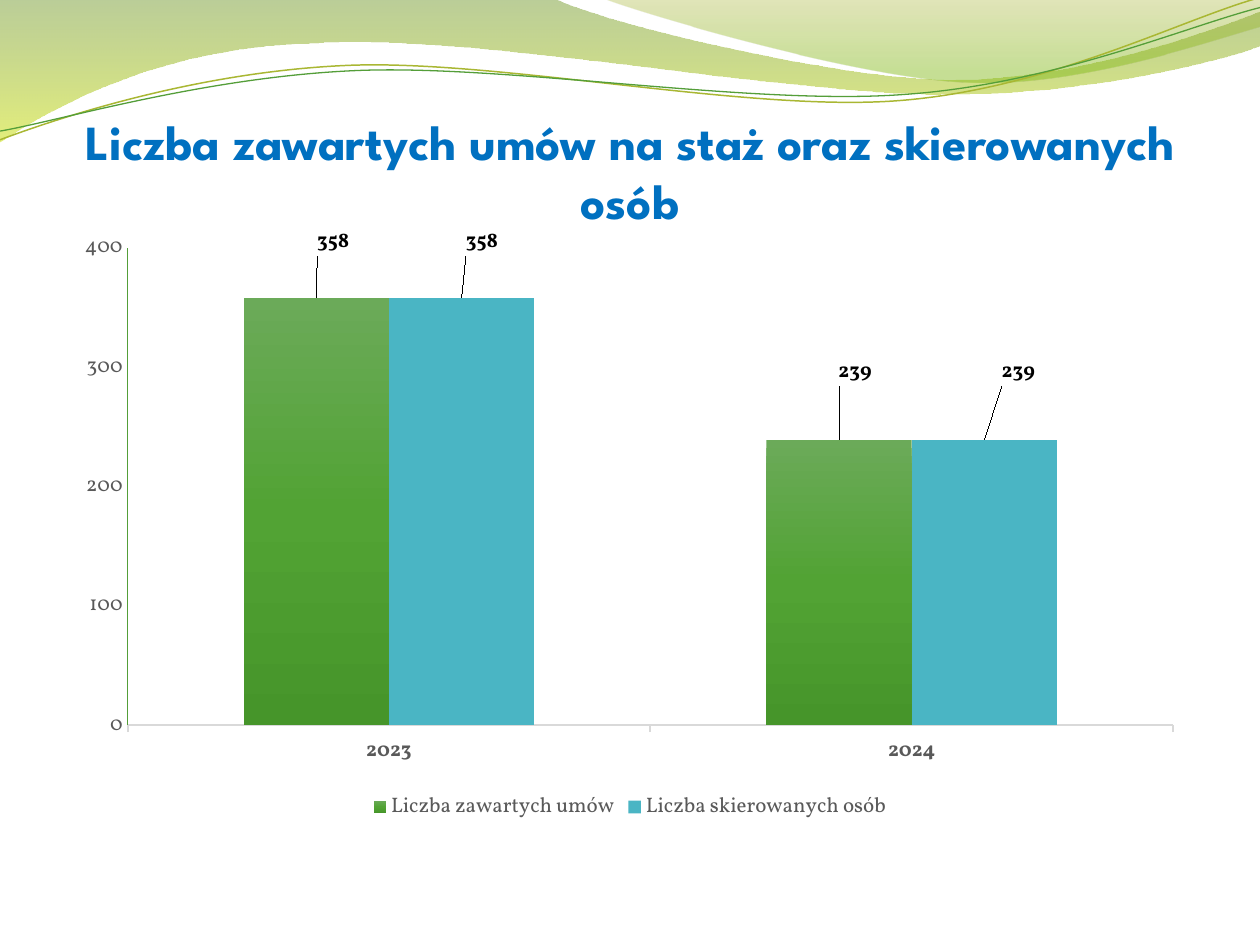
from lxml import etree
from pptx import Presentation
from pptx.chart.data import CategoryChartData
from pptx.dml.color import RGBColor
from pptx.enum.chart import XL_CHART_TYPE, XL_LABEL_POSITION, XL_LEGEND_POSITION, XL_TICK_MARK
from pptx.enum.text import MSO_ANCHOR, PP_ALIGN
from pptx.oxml import parse_xml
from pptx.oxml.ns import nsdecls, qn
from pptx.util import Pt

COLUMNS = XL_CHART_TYPE.COLUMN_CLUSTERED
OUTSIDE_END = XL_LABEL_POSITION.OUTSIDE_END
LEGEND_BOTTOM = XL_LEGEND_POSITION.BOTTOM
TICK_NONE, TICK_OUT = XL_TICK_MARK.NONE, XL_TICK_MARK.OUTSIDE
ANCHOR_BOTTOM = MSO_ANCHOR.BOTTOM
CENTER = PP_ALIGN.CENTER

HEADING_FONT, BODY_FONT = "League Spartan", "Vollkorn"
COLORS = {
    "title": "0070C0", "label": "000000", "axis_text": "595959",
    "axis_line": "D9D9D9", "green": "549E39", "olive": "A9B733", "teal": "4AB5C4",
}
# Gradient stops: position %, colour, opacity %
WIDE_WAVE = [(0, "69921C", 45), (100, "CCE10F", 55)]
RIGHT_WAVE = [(0, "9BAA1A", 30), (80, "81BA16", 45)]
GREEN_COLUMN = [(0, "6BAA59", 100), (50, "52A334", 100), (100, "46952A", 100)]

CATEGORIES = ["2023", "2024"]
AGREEMENTS = ("Liczba zawartych umów", [358, 239])
PEOPLE = ("Liczba skierowanych osób", [358, 239])
# Label shifts for each series and year, as fractions of the chart's size
LABEL_SHIFTS = [[(0.015, -0.06), (0.014, -0.08)], [(0.018, -0.06), (0.03, -0.08)]]


def rgb(name):
    return RGBColor.from_string(COLORS[name])


def style_font(font, size, color, bold=False, face=BODY_FONT):
    font.name, font.size, font.bold = face, Pt(size), bold
    font.color.rgb = rgb(color)


def style_line(line, color, width):
    line.color.rgb = rgb(color)
    line.width = Pt(width)


def vertical_gradient(fill, properties, stops):
    """Fill from top to bottom, with an opacity for each stop."""
    fill.gradient()
    stop_xml = "".join(
        f'<a:gs pos="{pos * 1000}"><a:srgbClr val="{color}">'
        f'<a:alpha val="{opacity * 1000}"/></a:srgbClr></a:gs>'
        for pos, color, opacity in stops)
    gradient = parse_xml(
        f'<a:gradFill {nsdecls("a")} rotWithShape="1"><a:gsLst>{stop_xml}</a:gsLst>'
        '<a:lin ang="5400000" scaled="0"/></a:gradFill>')
    properties.replace(properties.find(qn("a:gradFill")), gradient)


def add_curve(slide, left, top, start, segments, close):
    """Segments of one point are straight; those of three points are Bézier curves."""
    def place(point):
        return Pt(left + point[0]), Pt(top + point[1])

    builder = slide.shapes.build_freeform(*place(start))
    for segment in segments:
        builder.add_line_segments([place(point) for point in segment], close=False)
    if close:
        builder.add_line_segments([], close=True)
    curve = builder.convert_to_shape()
    curve.shadow.inherit = False
    steps = iter(list(curve._element.iter(qn("a:lnTo"))))
    for segment in segments:
        parts = [next(steps) for _ in segment]
        if len(parts) == 3:
            bezier = etree.Element(qn("a:cubicBezTo"))
            parts[0].addprevious(bezier)
            for part in parts:
                bezier.append(part[0])
                part.getparent().remove(part)
    return curve


def add_waves(slide, left, top):
    bands = [
        (WIDE_WAVE, (0, 0), [
            [(316.8, -0.7)],
            [(342, 12.2), (477.4, 45.4), (545.8, 45.4)],
            [(614.2, 45.4), (689.8, 18.7), (720, 6.5)],
            [(720.7, 25.9)],
            [(707.8, 31.7), (625.7, 54.7), (537.1, 54)],
            [(447.8, 54), (274.3, 20.2), (185, 24.5)],
            [(92.9, 25.9), (33.1, 59.8), (-0.7, 81.4)]]),
        (RIGHT_WAVE, (344.9, -0.7), [
            [(366.5, 7.9), (491, 44.6), (553, 46.8)],
            [(615.6, 49.7), (691.9, 23), (720, 15.1)],
            [(720, 0)]]),
    ]
    for stops, start, segments in bands:
        band = add_curve(slide, left, top, start, segments, close=True)
        vertical_gradient(band.fill, band._element.spPr, stops)
        band.line.fill.background()

    strands = [
        ("olive", 0.85, (0, 79.9), [
            [(34.6, 67), (113, 41), (198.7, 37.4)],
            [(284.4, 33.8), (426.2, 64.1), (512.6, 57.6)],
            [(599.8, 51.1), (675.4, 10.8), (720, -1.4)]]),
        ("green", 0.75, (0, 74.9), [
            [(33.8, 69.1), (117.4, 43.9), (203.8, 40.3)],
            [(289.4, 36.7), (429.8, 60.5), (516.2, 54)],
            [(601.9, 48.2), (677.5, 15.1), (720, 4.3)]]),
    ]
    for color, width, start, segments in strands:
        strand = add_curve(slide, left, top, start, segments, close=False)
        strand.fill.background()
        style_line(strand.line, color, width)


def add_title(slide, left, top, width, height):
    frame = slide.shapes.add_textbox(Pt(left), Pt(top), Pt(width), Pt(height)).text_frame
    frame.word_wrap = True
    frame.vertical_anchor = ANCHOR_BOTTOM
    frame.margin_left = frame.margin_right = frame.margin_bottom = 0
    frame.margin_top = Pt(3.6)
    heading = frame.paragraphs[0]
    heading.alignment = CENTER
    run = heading.add_run()
    run.text = "Liczba zawartych umów na staż oraz skierowanych osób"
    style_font(run.font, 28, "title", True, HEADING_FONT)


def manual_layout(x, y, plot_size=None):
    """Offsets for a label, or the inner plot area when a size is given."""
    values = [("x", x), ("y", y)]
    modes = ""
    if plot_size:
        values += zip("wh", plot_size)
        modes = ('<c:layoutTarget val="inner"/><c:xMode val="edge"/>'
                 '<c:yMode val="edge"/>')
    sizes = "".join(f'<c:{key} val="{value}"/>' for key, value in values)
    return parse_xml(f'<c:layout {nsdecls("c")}><c:manualLayout>{modes}{sizes}'
                     '</c:manualLayout></c:layout>')


def add_value_labels(series, shifts):
    labels = series.data_labels
    labels.show_value = True
    labels.position = OUTSIDE_END
    style_font(labels.font, 12, "label", True)
    for index, shift in enumerate(shifts):
        label = series.points[index].data_label
        style_font(label.font, 12, "label", True)
        label.position = OUTSIDE_END
        label._get_or_add_dLbl().insert(1, manual_layout(*shift))


def add_column_chart(slide, left, top, width, height):
    data = CategoryChartData()
    data.categories = CATEGORIES
    for name, values in (AGREEMENTS, PEOPLE):
        data.add_series(name, values)
    chart = slide.shapes.add_chart(
        COLUMNS, Pt(left), Pt(top), Pt(width), Pt(height), data).chart
    style_font(chart.font, 10, "label")
    chart.has_title = False
    chart.has_legend = True
    chart.legend.position = LEGEND_BOTTOM
    chart.legend.include_in_layout = False
    style_font(chart.legend.font, 12, "axis_text")

    years, counts = chart.category_axis, chart.value_axis
    years.major_tick_mark = TICK_OUT
    style_font(years.tick_labels.font, 12, "axis_text", True)
    style_line(years.format.line, "axis_line", 1)
    counts.major_tick_mark = TICK_NONE
    counts.has_major_gridlines = False
    counts.minimum_scale, counts.maximum_scale, counts.major_unit = 0, 400, 100
    style_font(counts.tick_labels.font, 12, "axis_text")
    style_line(counts.format.line, "green", 0.75)

    plot = chart.plots[0]
    plot.gap_width, plot.overlap = 160, 0
    plot.vary_by_categories = False
    agreements, people = plot.series
    vertical_gradient(agreements.format.fill, agreements._element.get_or_add_spPr(), GREEN_COLUMN)
    people.format.fill.solid()
    people.format.fill.fore_color.rgb = rgb("teal")
    for series, shifts in zip(plot.series, LABEL_SHIFTS):
        add_value_labels(series, shifts)

    plot_area = chart._chartSpace.chart.plotArea
    for layout in plot_area.findall(qn("c:layout")):
        plot_area.remove(layout)
    plot_area.insert(0, manual_layout(0.057, 0.043, (0.922, 0.789)))


def main():
    deck = Presentation()
    deck.slide_width, deck.slide_height = Pt(720), Pt(540)
    slide = deck.slides.add_slide(deck.slide_layouts[6])
    add_waves(slide, 0, 0)
    add_title(slide, 36, 41, 648, 90)
    add_column_chart(slide, 36, 126.7, 648, 345.6)
    deck.save("out.pptx")


if __name__ == "__main__":
    main()
